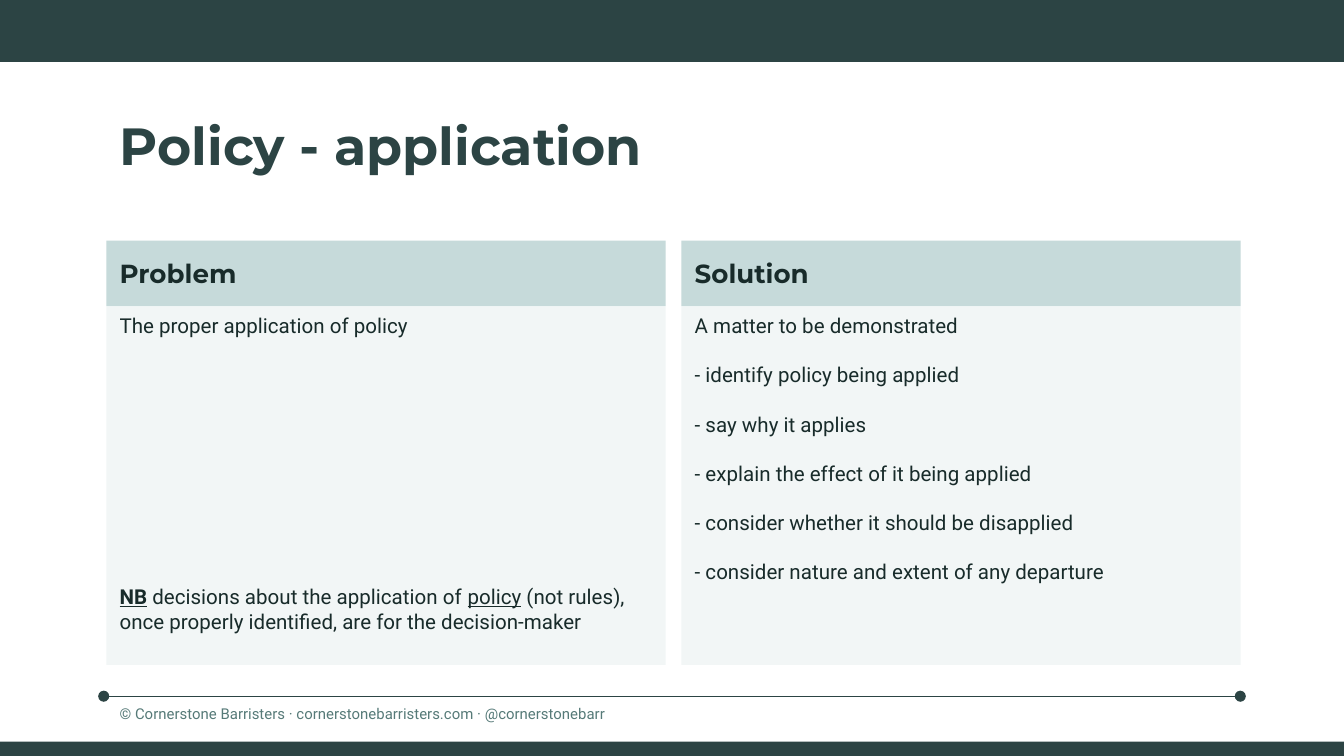
from dataclasses import dataclass

from lxml import etree
from pptx import Presentation
from pptx.dml.color import RGBColor
from pptx.enum.shapes import MSO_CONNECTOR, MSO_SHAPE
from pptx.enum.text import MSO_ANCHOR, MSO_AUTO_SIZE, PP_ALIGN
from pptx.oxml.ns import qn
from pptx.shapes.autoshape import Shape
from pptx.slide import Slide
from pptx.util import Cm, Pt

RECTANGLE = MSO_SHAPE.RECTANGLE
STRAIGHT = MSO_CONNECTOR.STRAIGHT
TOP, MIDDLE = MSO_ANCHOR.TOP, MSO_ANCHOR.MIDDLE
LEFT_ALIGNED = PP_ALIGN.LEFT
NO_AUTO_SIZE = MSO_AUTO_SIZE.NONE

COLORS = {
    "dark": "2C4444",
    "header": "C6DADA",
    "panel": "F2F6F6",
    "text": "182B2A",
    "footer": "567A78",
}
HEADING_FONT, BODY_FONT = "Montserrat", "Roboto"
SLIDE_WIDTH, SLIDE_HEIGHT = 25.4, 14.29
MARGIN = 2.01
COLUMN_WIDTH, COLUMN_STEP = 10.57, 10.87
HEADER_TOP, HEADER_HEIGHT, PANEL_HEIGHT = 4.55, 1.24, 6.78
LINE_PITCH = 13.2


@dataclass
class Span:
    text: str
    bold: bool = False
    underline: bool = False


@dataclass
class Column:
    heading: str
    paragraphs: list[list[Span]]
    blank_lines: int


@dataclass
class Style:
    font: str
    size: float
    color: str
    bold: bool = False


TITLE_STYLE = Style(HEADING_FONT, 28, "dark", True)
HEADER_STYLE = Style(HEADING_FONT, 14, "text", True)
BODY_STYLE = Style(BODY_FONT, 11, "text")
FOOTER_STYLE = Style(BODY_FONT, 8, "footer")

COLUMNS = [
    Column("Problem", [
        [Span("The proper application of policy")],
        [
            Span("NB", bold=True, underline=True),
            Span(" decisions about the application of "),
            Span("policy", underline=True),
            Span(" (not rules), once properly identified, are for the decision-maker"),
        ],
    ], 10),
    Column("Solution", [[Span(text)] for text in (
        "A matter to be demonstrated",
        "- identify policy being applied",
        "- say why it applies",
        "- explain the effect of it being applied",
        "- consider whether it should be disapplied",
        "- consider nature and extent of any departure",
    )], 1),
]


def color(name: str) -> RGBColor:
    return RGBColor.from_string(COLORS[name])


def write(shape: Shape, paragraphs: list[list[Span]], style: Style,
          anchor: MSO_ANCHOR = TOP, gap: float = 0) -> None:
    frame = shape.text_frame
    frame.word_wrap = True
    frame.auto_size = NO_AUTO_SIZE
    frame.vertical_anchor = anchor
    for index, spans in enumerate(paragraphs):
        paragraph = frame.add_paragraph() if index else frame.paragraphs[0]
        paragraph.alignment = LEFT_ALIGNED
        if index:
            paragraph.space_before = Pt(gap)
        paragraph.font.name = style.font
        paragraph.font.size = Pt(style.size)
        paragraph.font.bold = style.bold
        paragraph.font.color.rgb = color(style.color)
        for span in spans:
            run = paragraph.add_run()
            run.text = span.text
            if span.bold:
                run.font.bold = True
            if span.underline:
                run.font.underline = True


def add_block(slide: Slide, left: float, top: float, width: float,
              height: float, fill: str) -> Shape:
    block = slide.shapes.add_shape(RECTANGLE, Cm(left), Cm(top), Cm(width), Cm(height))
    block.shadow.inherit = False
    block.fill.solid()
    block.fill.fore_color.rgb = color(fill)
    block.line.fill.background()
    return block


def add_footer(slide: Slide) -> None:
    rule = slide.shapes.add_connector(STRAIGHT, Cm(1.96), Cm(13.16), Cm(23.44), Cm(13.16))
    rule.line.color.rgb = color("dark")
    rule.line.width = Pt(0.75)
    line = rule.line._get_or_add_ln()
    for end in ("a:headEnd", "a:tailEnd"):
        etree.SubElement(line, qn(end), type="oval", w="med", len="med")
    etree.SubElement(rule._element.spPr, qn("a:effectLst"))
    footer = slide.shapes.add_textbox(Cm(MARGIN), Cm(13.06), Cm(12.57), Cm(0.79))
    footer.text_frame.margin_top = footer.text_frame.margin_bottom = Cm(0.25)
    text = "© Cornerstone Barristers · cornerstonebarristers.com · @cornerstonebarr"
    write(footer, [[Span(text)]], FOOTER_STYLE)


def add_title(slide: Slide, text: str) -> None:
    title = slide.shapes.title
    title.left, title.top = Cm(MARGIN), Cm(MARGIN)
    title.width, title.height = Cm(COLUMN_STEP + COLUMN_WIDTH), Cm(1.47)
    write(title, [[Span(text)]], TITLE_STYLE)


def add_column(slide: Slide, column: Column, left: float) -> None:
    panel = add_block(slide, left, HEADER_TOP + HEADER_HEIGHT,
                      COLUMN_WIDTH, PANEL_HEIGHT, "panel")
    write(panel, column.paragraphs, BODY_STYLE, gap=column.blank_lines * LINE_PITCH)
    header = add_block(slide, left, HEADER_TOP, COLUMN_WIDTH, HEADER_HEIGHT, "header")
    write(header, [[Span(column.heading)]], HEADER_STYLE, MIDDLE)


def main() -> None:
    presentation = Presentation()
    presentation.slide_width = Cm(SLIDE_WIDTH)
    presentation.slide_height = Cm(SLIDE_HEIGHT)
    slide = presentation.slides.add_slide(presentation.slide_layouts[5])
    add_block(slide, 0, 0, SLIDE_WIDTH, 1.17, "dark")
    add_block(slide, 0, 14.02, SLIDE_WIDTH, 0.27, "dark")
    add_footer(slide)
    add_title(slide, "Policy - application")
    for index, column in enumerate(COLUMNS):
        add_column(slide, column, MARGIN + index * COLUMN_STEP)
    presentation.save("out.pptx")


if __name__ == "__main__":
    main()
